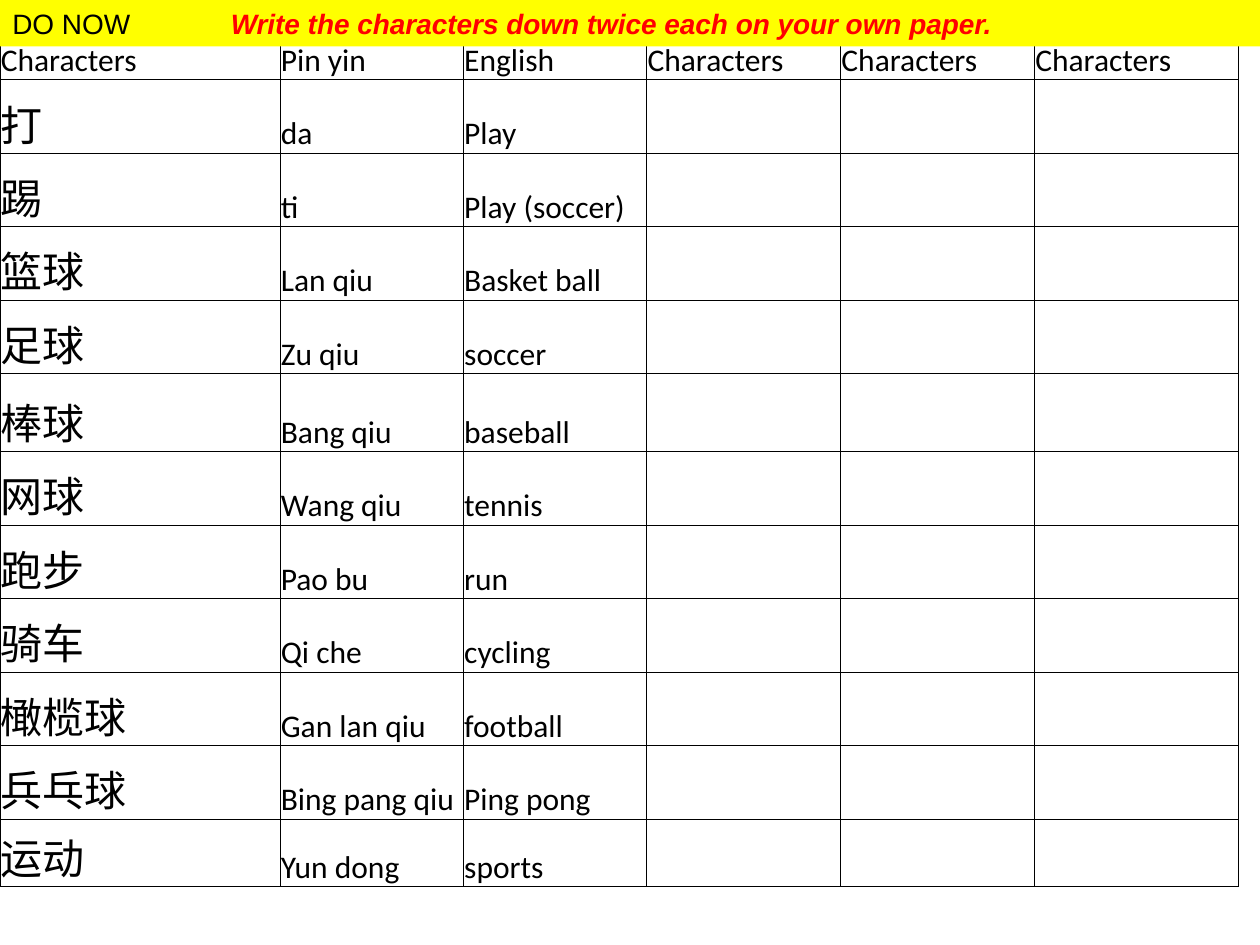
from lxml import etree
from pptx import Presentation
from pptx.dml.color import RGBColor
from pptx.enum.shapes import MSO_SHAPE
from pptx.enum.text import MSO_ANCHOR, PP_ALIGN
from pptx.oxml.ns import qn
from pptx.util import Pt

HEADINGS = ["Characters", "Pin yin", "English", "Characters", "Characters", "Characters"]
WORDS = [
    ("打", "da", "Play"),
    ("踢", "ti", "Play (soccer)"),
    ("篮球", "Lan qiu", "Basket ball"),
    ("足球", "Zu qiu", "soccer"),
    ("棒球", "Bang qiu", "baseball"),
    ("网球", "Wang qiu", "tennis"),
    ("跑步", "Pao bu", "run"),
    ("骑车", "Qi che", "cycling"),
    ("橄榄球", "Gan lan qiu", "football"),
    ("兵乓球", "Bing pang qiu", "Ping pong"),
    ("运动", "Yun dong", "sports"),
]

BLACK = RGBColor(0, 0, 0)
RED = RGBColor(255, 0, 0)
YELLOW = RGBColor(255, 255, 0)
BOTTOM, MIDDLE = MSO_ANCHOR.BOTTOM, MSO_ANCHOR.MIDDLE
LEFT = PP_ALIGN.LEFT
RECTANGLE = MSO_SHAPE.RECTANGLE

COLUMN_WIDTHS = [160, 104.8, 104.8, 110.8, 110.8, 116.4]
ROW_HEIGHTS = [24] + [42] * 4 + [44.6] + [42] * 5 + [38.8]
TABLE_TOP = 21.6
BANNER_HEIGHT = 26.6
INSTRUCTION_TAB = 124.8

BANNER_SPANS = [
    ("DO NOW\t", {"name": "Arial", "size": Pt(16)}, BLACK),
    ("Write the characters down twice each on your own paper.",
     {"name": "Arial", "size": Pt(16), "bold": True, "italic": True}, RED),
]
CELL_FORMAT = {
    "vertical_anchor": BOTTOM,
    "margin_left": Pt(0.5),
    "margin_top": Pt(0.5),
    "margin_right": Pt(0.5),
    "margin_bottom": Pt(0),
}


def apply_format(target, values):
    for name, value in values.items():
        setattr(target, name, value)


def add_span(para, text, font_values, color):
    span = para.add_run()
    span.text = text
    apply_format(span.font, font_values)
    span.font.color.rgb = color


def add_borders(cell):
    properties = cell._tc.get_or_add_tcPr()
    for index, side in enumerate(("a:lnL", "a:lnR", "a:lnT", "a:lnB")):
        line = etree.Element(qn(side), w=str(Pt(0.5)))
        fill = etree.SubElement(line, qn("a:solidFill"))
        etree.SubElement(fill, qn("a:srgbClr"), val=str(BLACK))
        properties.insert(index, line)


def add_word_table(page):
    rows = [HEADINGS] + [list(word) + [""] * 3 for word in WORDS]
    frame = page.shapes.add_table(
        len(rows), len(HEADINGS), Pt(0), Pt(TABLE_TOP),
        Pt(sum(COLUMN_WIDTHS)), Pt(sum(ROW_HEIGHTS)))
    table = frame.table
    apply_format(table, {"first_row": False, "horz_banding": False})
    for column, width in zip(table.columns, COLUMN_WIDTHS):
        column.width = Pt(width)
    for row, height in zip(table.rows, ROW_HEIGHTS):
        row.height = Pt(height)
    for row_index, texts in enumerate(rows):
        for column_index, text in enumerate(texts):
            cell = table.cell(row_index, column_index)
            cell.fill.background()
            add_borders(cell)
            if text:
                apply_format(cell, CELL_FORMAT)
                size = 24 if row_index and column_index == 0 else 18
                add_span(cell.text_frame.paragraphs[0], text,
                         {"name": "Calibri", "size": Pt(size)}, BLACK)


def add_banner(page, width):
    banner = page.shapes.add_shape(RECTANGLE, Pt(0), Pt(0), width, Pt(BANNER_HEIGHT))
    banner.shadow.inherit = False
    banner.fill.solid()
    banner.fill.fore_color.rgb = YELLOW
    banner.line.fill.background()
    apply_format(banner.text_frame, {"word_wrap": True, "vertical_anchor": MIDDLE})
    para = banner.text_frame.paragraphs[0]
    para.alignment = LEFT
    tabs = etree.SubElement(para._p.get_or_add_pPr(), qn("a:tabLst"))
    etree.SubElement(tabs, qn("a:tab"), pos=str(Pt(INSTRUCTION_TAB)), algn="l")
    for text, font_values, color in BANNER_SPANS:
        add_span(para, text, font_values, color)


def main():
    deck = Presentation()
    apply_format(deck, {"slide_width": Pt(720), "slide_height": Pt(540)})
    page = deck.slides.add_slide(deck.slide_layouts[6])
    add_word_table(page)
    add_banner(page, deck.slide_width)
    deck.save("out.pptx")


if __name__ == "__main__":
    main()
